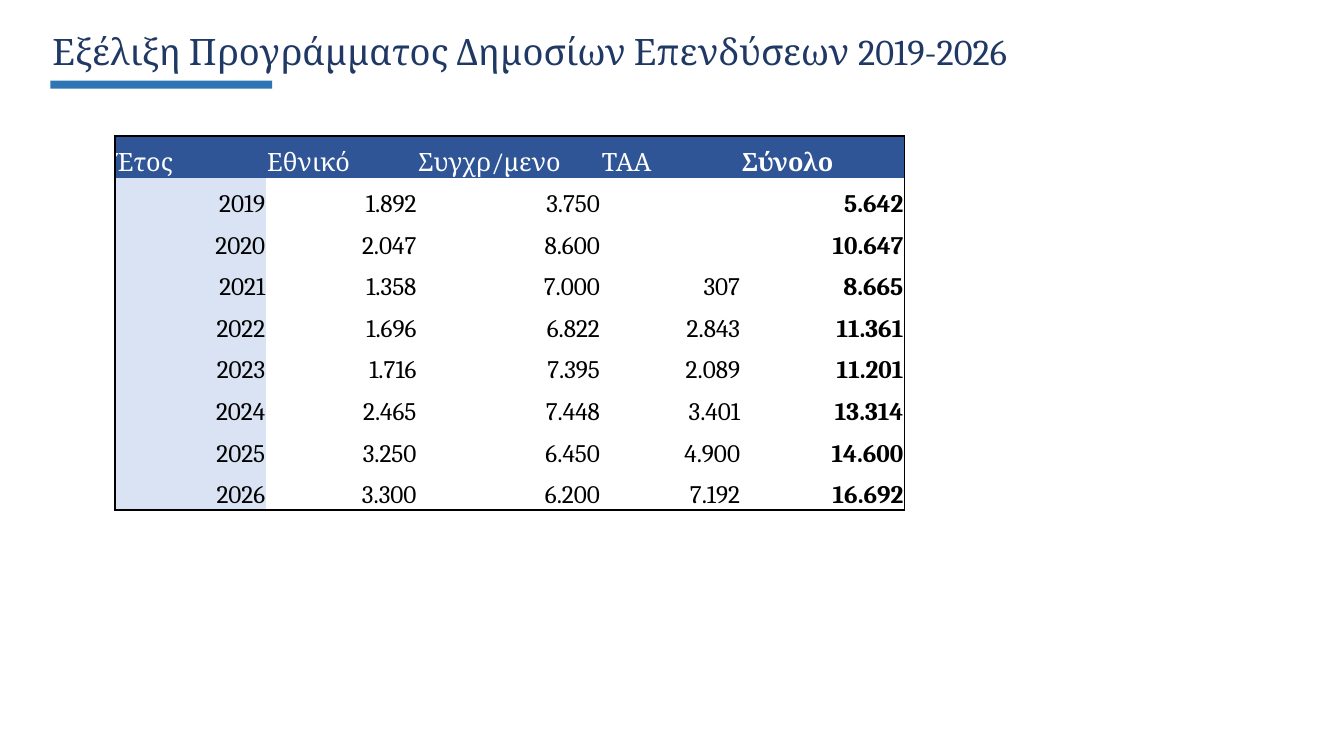
from dataclasses import dataclass

from lxml.etree import SubElement
from pptx import Presentation
from pptx.dml.color import RGBColor
from pptx.enum.shapes import MSO_SHAPE
from pptx.enum.text import MSO_ANCHOR, MSO_AUTO_SIZE, PP_ALIGN
from pptx.oxml.ns import qn
from pptx.util import Inches, Pt

FONT = "Cambria"
NAVY, ACCENT, HEADER, YEAR = "203864", "2E75B6", "2F5597", "DAE3F3"
WHITE, BLACK = "FFFFFF", "000000"
ROW_HEIGHT = 0.4125


@dataclass(frozen=True)
class Column:
    heading: str
    width: float
    values: tuple[str, ...]
    fill: str | None = None
    bold: bool = False


COLUMNS = (
    Column("Έτος", 1.5, tuple(str(year) for year in range(2019, 2027)), fill=YEAR),
    Column("Εθνικό", 1.5, ("1.892", "2.047", "1.358", "1.696", "1.716", "2.465", "3.250", "3.300")),
    Column("Συγχρ/μενο", 1.82, ("3.750", "8.600", "7.000", "6.822", "7.395", "7.448", "6.450", "6.200")),
    Column("ΤΑΑ", 1.39, ("", "", "307", "2.843", "2.089", "3.401", "4.900", "7.192")),
    Column("Σύνολο", 1.62, ("5.642", "10.647", "8.665", "11.361", "11.201", "13.314", "14.600", "16.692"),
           bold=True),
)


def color(value: str) -> RGBColor:
    """Turn a hex string into a colour."""
    return RGBColor.from_string(value)


def style_font(font, size: float, value: str, bold: bool = False) -> None:
    """Apply the slide's typeface with a size, colour and weight."""
    font.name = FONT
    font.size = Pt(size)
    font.bold = bold
    font.color.rgb = color(value)


def set_borders(cell, edges: dict[str, bool]) -> None:
    """Draw a thin black line on the chosen edges and none on the others."""
    properties = cell._tc.get_or_add_tcPr()
    for edge, visible in edges.items():
        line = SubElement(properties, qn(f"a:ln{edge}"), w=str(Pt(1)))
        if visible:
            fill = SubElement(line, qn("a:solidFill"))
            SubElement(fill, qn("a:srgbClr"), val=BLACK)
        else:
            SubElement(line, qn("a:noFill"))


def fill_cell(cell, text: str, column: Column, is_header: bool) -> None:
    """Write and format one table cell."""
    cell.margin_left = cell.margin_right = cell.margin_top = Inches(0.01)
    cell.margin_bottom = 0
    cell.vertical_anchor = MSO_ANCHOR.BOTTOM
    cell.text_frame.text = text
    para = cell.text_frame.paragraphs[0]
    para.alignment = PP_ALIGN.LEFT if is_header else PP_ALIGN.RIGHT
    for span in para.runs:
        style_font(span.font, 18, WHITE if is_header else BLACK, column.bold)
    fill = HEADER if is_header else column.fill
    if fill:
        cell.fill.solid()
        cell.fill.fore_color.rgb = color(fill)
    else:
        cell.fill.background()


def add_title(page, text: str) -> None:
    """Place the title and its accent bar."""
    title = page.shapes.title
    title.left, title.top = Inches(0.42), Inches(0.24)
    title.width, title.height = Inches(12.44), Inches(0.54)
    frame = title.text_frame
    frame.text = text
    frame.word_wrap = True
    frame.auto_size = MSO_AUTO_SIZE.SHAPE_TO_FIT_TEXT
    frame.vertical_anchor = MSO_ANCHOR.TOP
    frame.paragraphs[0].alignment = PP_ALIGN.LEFT
    style_font(frame.paragraphs[0].runs[0].font, 26, NAVY)

    bar = page.shapes.add_shape(
        MSO_SHAPE.RECTANGLE, Inches(0.5), Inches(0.8), Inches(2.2), Inches(0.08))
    bar.shadow.inherit = False
    bar.fill.solid()
    bar.fill.fore_color.rgb = color(ACCENT)
    bar.line.fill.background()


def add_budget_table(page, columns: tuple[Column, ...]) -> None:
    """Build the yearly investment table."""
    row_count = len(columns[0].values) + 1
    width = sum(column.width for column in columns)
    table = page.shapes.add_table(
        row_count, len(columns), Inches(1.14), Inches(1.35),
        Inches(width), Inches(ROW_HEIGHT * row_count)).table
    table.first_row = table.horz_banding = False
    for row in table.rows:
        row.height = Inches(ROW_HEIGHT)
    for column_index, column in enumerate(columns):
        table.columns[column_index].width = Inches(column.width)
        for row_index, text in enumerate((column.heading, *column.values)):
            cell = table.cell(row_index, column_index)
            set_borders(cell, {
                "L": column_index == 0,
                "R": column_index == len(columns) - 1,
                "T": row_index == 0,
                "B": row_index == row_count - 1,
            })
            fill_cell(cell, text, column, row_index == 0)


def main() -> None:
    deck = Presentation()
    deck.slide_width, deck.slide_height = Inches(13.33), Inches(7.5)
    page = deck.slides.add_slide(deck.slide_layouts[5])
    add_title(page, "Εξέλιξη Προγράμματος Δημοσίων Επενδύσεων 2019-2026")
    add_budget_table(page, COLUMNS)
    deck.save("out.pptx")


if __name__ == "__main__":
    main()
